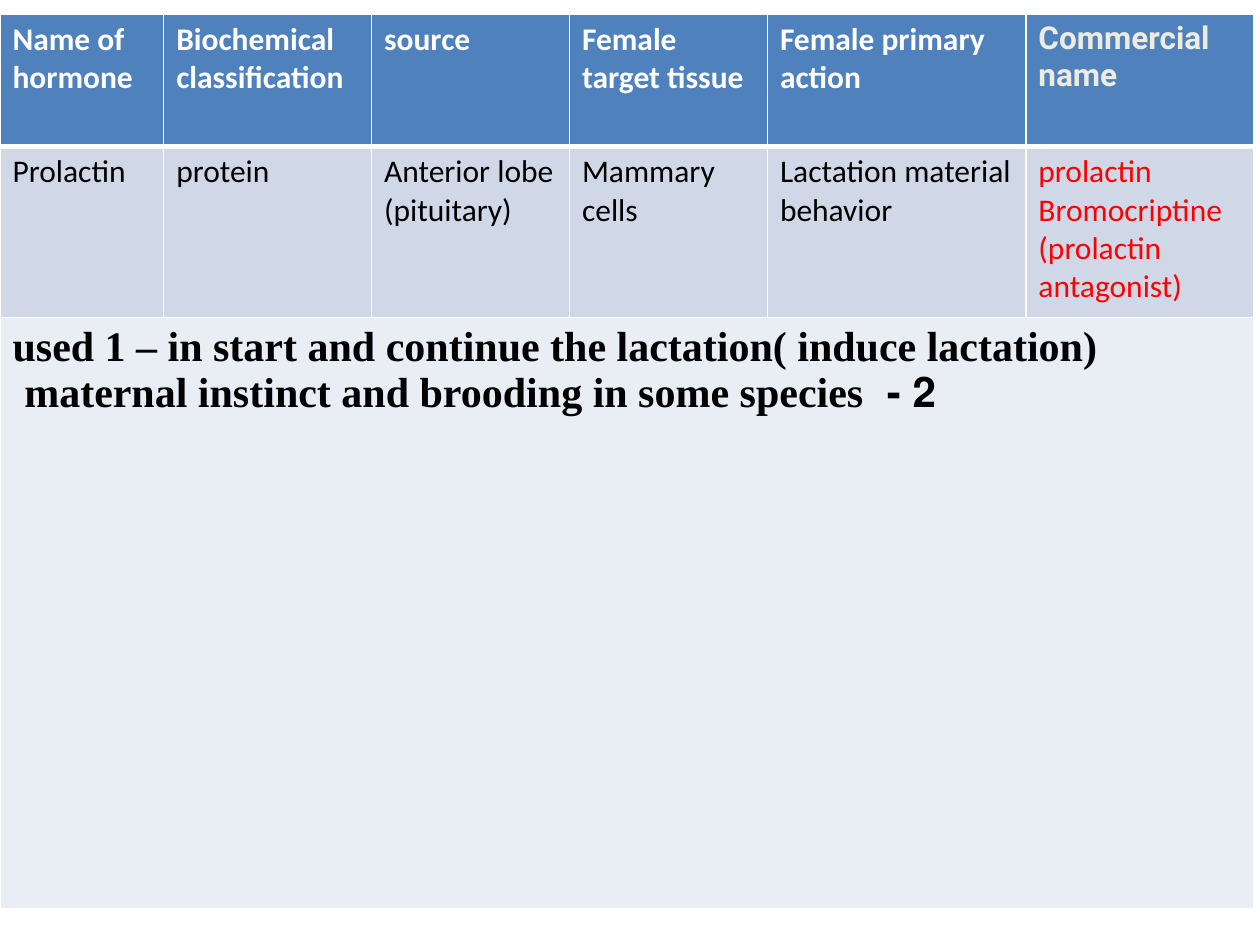
from lxml import etree
from pptx import Presentation
from pptx.dml.color import RGBColor
from pptx.enum.text import PP_ALIGN
from pptx.oxml.ns import qn
from pptx.util import Cm, Pt

LEFT = PP_ALIGN.LEFT
BLANK_LAYOUT = 6

COLORS = {
    "white": "FFFFFF", "black": "000000", "red": "FF0000", "cream": "EEECE1",
    "header": "4F81BD", "band": "D0D8E8", "notes": "E9EDF4",
}
HEADER = {"name": "Calibri", "size": Pt(18), "bold": True, "color": "white"}
COMMERCIAL = {**HEADER, "name": "Roboto", "color": "cream"}
BODY = {**HEADER, "bold": False, "color": "black"}
DRUG = {**BODY, "color": "red"}
NOTES = {"name": "Times New Roman", "size": Pt(24), "bold": True, "color": "black"}

COLUMN_WIDTHS = [3.3, 4.19, 3.99, 3.99, 5.21, 4.6]
ROW_HEIGHTS = [2.67, 3.45, 11.91]

HEADINGS = ["Name of hormone", "Biochemical classification", "source",
            "Female target tissue", "Female primary action", "Commercial name"]
PROLACTIN = ["Prolactin", "protein", "Anterior lobe (pituitary)", "Mammary cells",
             "Lactation material behavior",
             "prolactin\nBromocriptine (prolactin antagonist)"]
USES = ("used 1 – in start and continue the lactation( induce lactation)\n"
        "2 -  maternal instinct and brooding in some species ")


class SlideBuilder:
    def __init__(self, slide):
        self.slide = slide

    def color(self, name):
        return RGBColor.from_string(COLORS[name])

    def table(self, left, top, widths, heights):
        shape = self.slide.shapes.add_table(
            len(heights), len(widths), Cm(left), Cm(top), Cm(sum(widths)), Cm(sum(heights)))
        table = shape.table
        table.first_row = table.horz_banding = False
        for column, width in zip(table.columns, widths):
            column.width = Cm(width)
        for row, height in zip(table.rows, heights):
            row.height = Cm(height)
        return table

    def borders(self, cell, top=1, bottom=1):
        properties = cell._tc.get_or_add_tcPr()
        sides = {"lnL": 1, "lnR": 1, "lnT": top, "lnB": bottom}
        for index, (side, points) in enumerate(sides.items()):
            line = etree.Element(qn("a:" + side), w=str(Pt(points)))
            fill = etree.SubElement(line, qn("a:solidFill"))
            etree.SubElement(fill, qn("a:srgbClr"), val=COLORS["white"])
            properties.insert(index, line)

    def cell(self, cell, text, fill, style, right_to_left=False):
        cell.fill.solid()
        cell.fill.fore_color.rgb = self.color(fill)
        cell.text = text
        for paragraph in cell.text_frame.paragraphs:
            paragraph.alignment = LEFT
            if right_to_left:
                paragraph._p.get_or_add_pPr().set("rtl", "1")
            for run in paragraph.runs:
                for attribute, value in style.items():
                    if attribute == "color":
                        run.font.color.rgb = self.color(value)
                    else:
                        setattr(run.font, attribute, value)


def main():
    presentation = Presentation()
    presentation.slide_width, presentation.slide_height = Cm(25.4), Cm(19.05)
    slide = presentation.slides.add_slide(presentation.slide_layouts[BLANK_LAYOUT])
    builder = SlideBuilder(slide)
    table = builder.table(0, 0.28, COLUMN_WIDTHS, ROW_HEIGHTS)

    # White grid, with a heavier rule under the header
    for row_index in range(len(ROW_HEIGHTS)):
        for column_index in range(len(COLUMN_WIDTHS)):
            builder.borders(table.cell(row_index, column_index),
                            top=3 if row_index == 1 else 1,
                            bottom=3 if row_index == 0 else 1)

    # Header and hormone rows; the last column has its own style
    rows = [(HEADINGS, "header", HEADER, COMMERCIAL), (PROLACTIN, "band", BODY, DRUG)]
    for row_index, (texts, fill, style, last_style) in enumerate(rows):
        styles = [style] * (len(texts) - 1) + [last_style]
        for column_index, (text, cell_style) in enumerate(zip(texts, styles)):
            builder.cell(table.cell(row_index, column_index), text, fill, cell_style)

    # Uses, across the full width
    uses_cell = table.cell(2, 0)
    uses_cell.merge(table.cell(2, len(COLUMN_WIDTHS) - 1))
    builder.cell(uses_cell, USES, "notes", NOTES, right_to_left=True)

    presentation.save("out.pptx")


if __name__ == "__main__":
    main()
